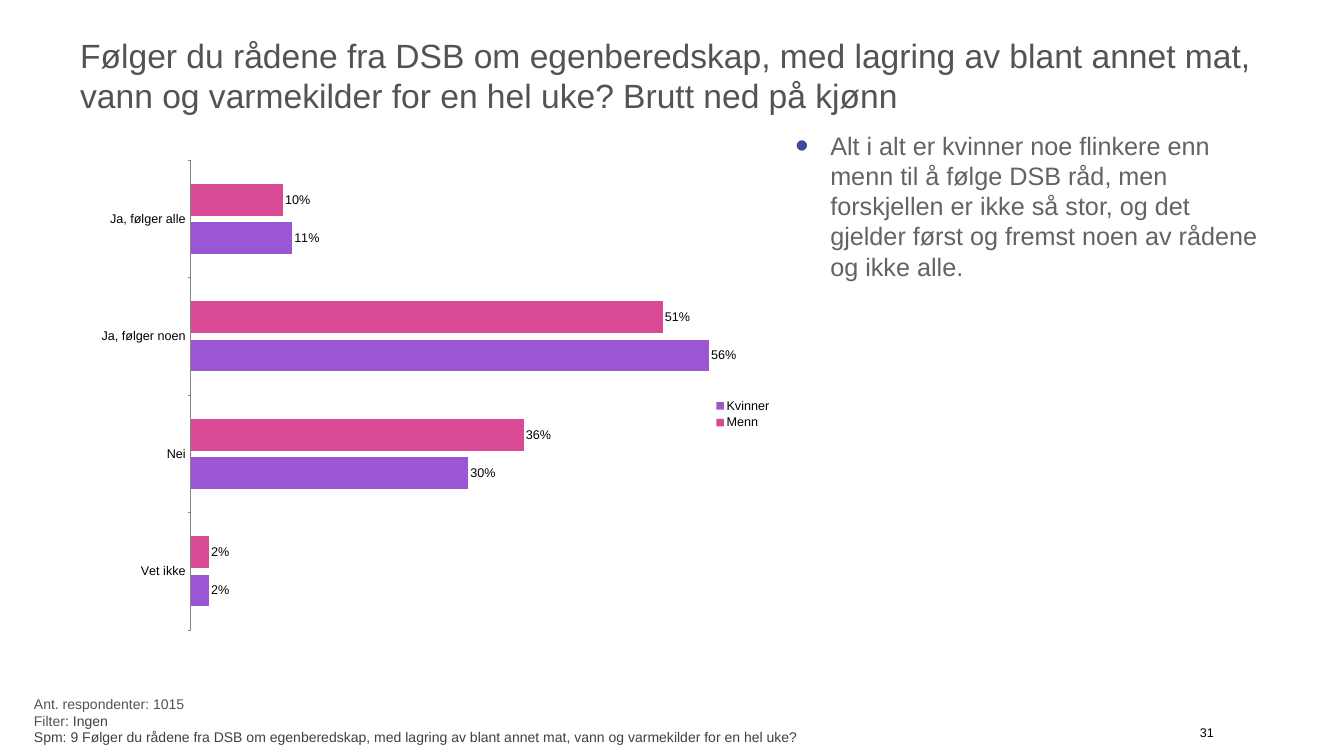
from lxml.etree import SubElement
from pptx import Presentation
from pptx.chart.data import CategoryChartData
from pptx.dml.color import RGBColor
from pptx.enum.chart import XL_CHART_TYPE, XL_LABEL_POSITION, XL_LEGEND_POSITION, XL_TICK_MARK
from pptx.enum.text import MSO_ANCHOR, PP_ALIGN
from pptx.oxml.ns import qn
from pptx.util import Pt

COLORS = {"title": "535353", "filter": "404040", "body": "626362", "bullet": "3D4A9A",
          "black": "000000", "axis": "868686", "menn": "D94A94", "kvinner": "9B57D3"}
FONT = "Arial"
TITLE = ("Følger du rådene fra DSB om egenberedskap, med lagring av blant annet mat, "
         "vann og varmekilder for en hel uke? Brutt ned på kjønn")
BODY = ("Alt i alt er kvinner noe flinkere enn menn til å følge DSB råd, men forskjellen "
        "er ikke så stor, og det gjelder først og fremst noen av rådene og ikke alle.")
FOOTER = [
    [("Ant. respondenter: 1015", "title")],
    [("Filter", "title"), (": Ingen", "filter")],
    [("Spm: 9 Følger du rådene fra DSB om egenberedskap, med lagring av blant annet mat, "
      "vann og varmekilder for en hel uke?", "filter")],
]
CATEGORIES = ["Ja, følger alle", "Ja, følger noen", "Nei", "Vet ikke"]
SERIES = [("Menn", [0.10, 0.51, 0.36, 0.02], "menn"),
          ("Kvinner", [0.11, 0.56, 0.30, 0.02], "kvinner")]
PLOT = {"x": 0.214, "y": 0.033, "w": 0.744, "h": 0.864}


def rgb(name):
    return RGBColor.from_string(COLORS[name])


def write(sp, paragraphs, box, size, inset=(4.5, 4.5), anchor=MSO_ANCHOR.TOP,
          align=PP_ALIGN.LEFT, wrap=True, bullet=False):
    sp.left, sp.top, sp.width, sp.height = map(Pt, box)
    tf = sp.text_frame
    tf.word_wrap, tf.vertical_anchor = wrap, anchor
    tf.margin_left = tf.margin_right = Pt(inset[0])
    tf.margin_top = tf.margin_bottom = Pt(inset[1])
    for i, runs in enumerate(paragraphs):
        p = tf.add_paragraph() if i else tf.paragraphs[0]
        p.alignment = align
        if bullet:
            add_bullet(p)
        for text, color in runs:
            r = p.add_run()
            r.text = text
            r.font.name, r.font.size = FONT, Pt(size)
            r.font.color.rgb = rgb(color)


def add_bullet(p):
    p.space_after = Pt(6)
    pPr = p._p.get_or_add_pPr()
    pPr.set("marL", str(Pt(50)))
    pPr.set("indent", str(-Pt(50)))
    color = SubElement(pPr, qn("a:buClr"))
    SubElement(color, qn("a:srgbClr"), val=COLORS["bullet"])
    SubElement(pPr, qn("a:buSzPct"), val="150000")
    SubElement(pPr, qn("a:buFont"), typeface=FONT)
    SubElement(pPr, qn("a:buChar"), char="•")


def add_bars(s, box):
    data = CategoryChartData(number_format="0%")
    data.categories = CATEGORIES
    for name, values, _ in SERIES:
        data.add_series(name, values)
    chart = s.shapes.add_chart(XL_CHART_TYPE.BAR_CLUSTERED, *map(Pt, box), data).chart
    chart.has_title = False
    chart.font.name, chart.font.size = FONT, Pt(18)
    chart.font.color.rgb = rgb("black")

    chart.has_legend = True
    chart.legend.position = XL_LEGEND_POSITION.RIGHT
    chart.legend.include_in_layout = False

    cat = chart.category_axis
    cat.reverse_order = True
    cat.has_major_gridlines = False
    cat.major_tick_mark = XL_TICK_MARK.OUTSIDE
    cat.format.line.color.rgb = rgb("axis")
    val = chart.value_axis
    val.visible = val.has_major_gridlines = False
    val.minimum_scale, val.maximum_scale = 0, 0.6

    plot = chart.plots[0]
    plot.gap_width, plot.overlap, plot.vary_by_categories = 150, -20, False
    for series, (_, _, color) in zip(plot.series, SERIES):
        series.format.fill.solid()
        series.format.fill.fore_color.rgb = rgb(color)
        labels = series.data_labels
        labels.show_value = True
        labels.number_format, labels.number_format_is_linked = "0%", False
        labels.position = XL_LABEL_POSITION.OUTSIDE_END

    area = chart._chartSpace.chart.plotArea
    for old in area.findall(qn("c:layout")):
        area.remove(old)
    layout = SubElement(area, qn("c:layout"))
    area.insert(0, layout)
    manual = SubElement(layout, qn("c:manualLayout"))
    SubElement(manual, qn("c:layoutTarget"), val="inner")
    for key in "xy":
        SubElement(manual, qn(f"c:{key}Mode"), val="edge")
    for key, value in PLOT.items():
        SubElement(manual, qn(f"c:{key}"), val=str(value))


def main():
    prs = Presentation()
    prs.slide_width, prs.slide_height = Pt(1920), Pt(1080)
    s = prs.slides.add_slide(prs.slide_layouts[5])

    def textbox():
        return s.shapes.add_textbox(0, 0, 0, 0)

    write(s.shapes.title, [[(TITLE, "title")]], (110, 34, 1703.5, 147), 48,
          anchor=MSO_ANCHOR.MIDDLE)
    write(textbox(), [[("31", "black")]], (1709, 1031, 30, 30), 18,
          align=PP_ALIGN.CENTER, wrap=False)
    write(textbox(), FOOTER, (44, 998, 1703.5, 62.5), 20, anchor=MSO_ANCHOR.MIDDLE)
    write(textbox(), [[(BODY, "body")]], (1129, 182, 688, 777), 36,
          inset=(7.2, 3.6), bullet=True)
    add_bars(s, (44, 203, 1067, 777.5))
    prs.save("out.pptx")


if __name__ == "__main__":
    main()
